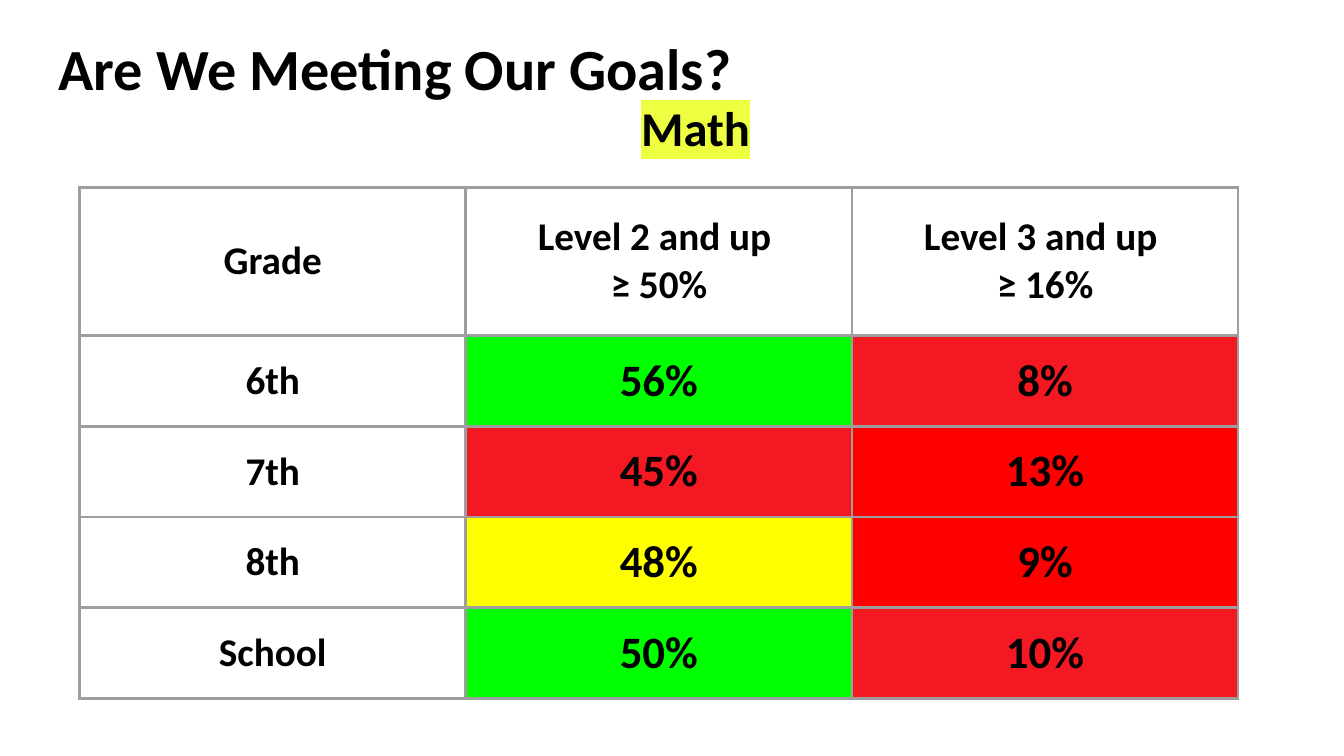
import pptx
import pptx.util
import pptx.dml.color
import pptx.enum.text
import pptx.oxml
import pptx.oxml.ns
from pptx.util import Inches

COLORS = {
    "text": "000000", "border": "9E9E9E", "highlight": "EEFF41",
    "met": "00FF00", "near": "FFFF00", "missed": "F41823", "far": "FF0000",
}
HEADINGS = ["Grade", "Level 2 and up \n≥ 50%", "Level 3 and up \n≥ 16%"]
RESULTS = [
    ("6th", ("56%", "met"), ("8%", "missed")),
    ("7th", ("45%", "missed"), ("13%", "far")),
    ("8th", ("48%", "near"), ("9%", "far")),
    ("School", ("50%", "met"), ("10%", "missed")),
]
ALIGN = pptx.enum.text.PP_ALIGN
ANCHOR = pptx.enum.text.MSO_ANCHOR


def rgb(name):
    """Return the named colour."""
    return pptx.dml.color.RGBColor.from_string(COLORS[name])


def write(frame, text, size, align):
    """Fill a text frame with bold Calibri."""
    frame.text = text
    frame.word_wrap = True
    for paragraph in frame.paragraphs:
        paragraph.alignment = align
        for run in paragraph.runs:
            run.font.name = "Calibri"
            run.font.size = pptx.util.Pt(size)
            run.font.bold = True
            run.font.color.rgb = rgb("text")


def set_insets(holder):
    """Give a cell or text frame equal margins."""
    for side in ("left", "top", "right", "bottom"):
        setattr(holder, f"margin_{side}", Inches(0.13))


def place(shape, left, top, width, height):
    """Move a shape into its box."""
    shape.left, shape.top = Inches(left), Inches(top)
    shape.width, shape.height = Inches(width), Inches(height)


def add_title(slide, left, top, width, height):
    """Set the slide title in its box."""
    title = slide.shapes.title
    place(title, left, top, width, height)
    frame = title.text_frame
    write(frame, "Are We Meeting Our Goals?", 41.6, ALIGN.LEFT)
    set_insets(frame)
    frame.vertical_anchor = ANCHOR.TOP
    frame.auto_size = pptx.enum.text.MSO_AUTO_SIZE.NONE


def add_subject(slide, left, top, width, height):
    """Add the highlighted subject in its box."""
    subject = slide.shapes.add_textbox(0, 0, 0, 0)
    place(subject, left, top, width, height)
    frame = subject.text_frame
    write(frame, "Math", 34.7, ALIGN.CENTER)
    set_insets(frame)
    frame.auto_size = pptx.enum.text.MSO_AUTO_SIZE.SHAPE_TO_FIT_TEXT
    properties = frame.paragraphs[0].runs[0].font._element
    highlight = pptx.oxml.parse_xml(
        f'<a:highlight {pptx.oxml.ns.nsdecls("a")}>'
        f'<a:srgbClr val="{COLORS["highlight"]}"/></a:highlight>')
    properties.find(pptx.oxml.ns.qn("a:solidFill")).addnext(highlight)


def format_cell(cell, text, size, fill=None):
    """Write, fill and border one cell."""
    write(cell.text_frame, text, size, ALIGN.CENTER)
    set_insets(cell)
    cell.vertical_anchor = ANCHOR.MIDDLE
    if fill:
        cell.fill.solid()
        cell.fill.fore_color.rgb = rgb(fill)
    else:
        cell.fill.background()
    properties = cell._tc.get_or_add_tcPr()
    for position, edge in enumerate(("lnL", "lnR", "lnT", "lnB")):
        properties.insert(position, pptx.oxml.parse_xml(
            f'<a:{edge} {pptx.oxml.ns.nsdecls("a")} w="{pptx.util.Pt(2.25)}">'
            f'<a:solidFill><a:srgbClr val="{COLORS["border"]}"/></a:solidFill>'
            f'</a:{edge}>'))


def add_results(slide, left, top, width, height):
    """Add the goals table in its box."""
    header_height = 1.47
    results = slide.shapes.add_table(
        len(RESULTS) + 1, len(HEADINGS), Inches(left), Inches(top),
        Inches(width), Inches(height)).table
    results.first_row = results.horz_banding = False
    for column in results.columns:
        column.width = Inches(width / len(HEADINGS))
    for row in results.rows:
        row.height = Inches((height - header_height) / len(RESULTS))
    results.rows[0].height = Inches(header_height)
    for column, heading in enumerate(HEADINGS):
        format_cell(results.cell(0, column), heading, 28)
    for row, (grade, *scores) in enumerate(RESULTS, 1):
        format_cell(results.cell(row, 0), grade, 28)
        for column, (score, status) in enumerate(scores, 1):
            format_cell(results.cell(row, column), score, 32, status)


def main():
    """Build and save the slide."""
    deck = pptx.Presentation()
    deck.slide_width, deck.slide_height = Inches(13.33), Inches(7.5)
    slide = deck.slides.add_slide(deck.slide_layouts[5])
    add_results(slide, 0.79, 1.86, 11.49, 5.07)
    add_subject(slide, 4.5, 0.84, 4.8, 0.85)
    add_title(slide, 0.45, 0.19, 12.42, 0.84)
    deck.save("out.pptx")


if __name__ == "__main__":
    main()
